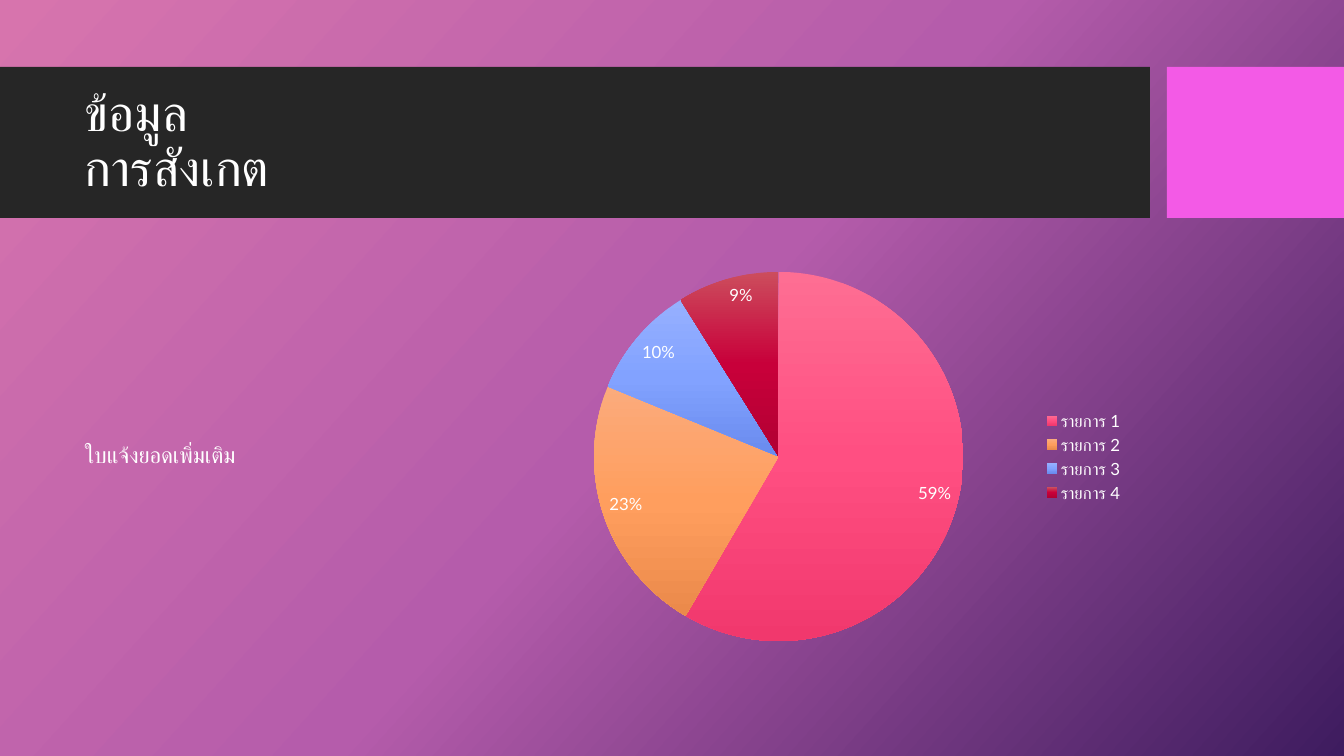
import copy
import pptx
import pptx.chart.data
import pptx.dml.color
import pptx.enum.chart
import pptx.enum.shapes
import pptx.enum.text
import pptx.util

SCALE = 12192000 / 1344
FONT = "Lato"
WHITE = "FFFFFF"


def rgb(value):
    return pptx.dml.color.RGBColor.from_string(value)


def gradient(fill, parent, colors, angle):
    fill.gradient()
    fill.gradient_angle = 360 - angle
    stops = parent.xpath(".//a:gsLst")[-1]
    stops.insert(1, copy.deepcopy(stops[0]))
    for stop, color, position in zip(fill.gradient_stops, colors, (0, 0.5, 1)):
        stop.color.rgb = rgb(color)
        stop.position = position


prs = pptx.Presentation()
prs.slide_width = round(1344 * SCALE)
prs.slide_height = round(756 * SCALE)
s = prs.slides.add_slide(prs.slide_layouts[6])
gradient(s.background.fill, s._element, ("D774AD", "B55CAB", "3E1C5F"), 42)

for left, width, color in ((0, 1150, "262626"), (1167, 177, "F35AE6")):
    box = [round(n * SCALE) for n in (left, 67, width, 151)]
    sp = s.shapes.add_shape(pptx.enum.shapes.MSO_SHAPE.RECTANGLE, *box)
    sp.shadow.inherit = False
    sp.fill.solid()
    sp.fill.fore_color.rgb = rgb(color)
    sp.line.fill.background()

texts = (
    ("ข้อมูล\vการสังเกต", (75, 83, 1059, 119), 36),
    ("ใบแจ้งยอดเพิ่มเติม", (75, 258, 417, 397), 16),
)
for text, box, size in texts:
    tf = s.shapes.add_textbox(*[round(n * SCALE) for n in box]).text_frame
    tf.word_wrap = True
    tf.vertical_anchor = pptx.enum.text.MSO_ANCHOR.MIDDLE
    p = tf.paragraphs[0]
    p.text = text
    p.line_spacing = 0.9
    for r in p.runs:
        for name, value in {"name": FONT, "size": pptx.util.Pt(size)}.items():
            setattr(r.font, name, value)
        r.font.color.rgb = rgb(WHITE)

data = pptx.chart.data.CategoryChartData()
data.categories = [f"รายการ {n}" for n in range(1, 5)]
data.add_series("Series 1", (59, 23, 10, 9))
box = [round(n * SCALE) for n in (516, 258, 618, 397)]
chart = s.shapes.add_chart(pptx.enum.chart.XL_CHART_TYPE.PIE, *box, data).chart
chart.has_title = False
chart.has_legend = True
chart.legend.position = pptx.enum.chart.XL_LEGEND_POSITION.RIGHT
chart.legend.include_in_layout = False

plot = chart.plots[0]
plot.vary_by_categories = True
plot.has_data_labels = True
labels = plot.data_labels
label_format = {
    "show_value": True,
    "show_percentage": False,
    "number_format": '0"%"',
    "number_format_is_linked": False,
    "position": pptx.enum.chart.XL_LABEL_POSITION.INSIDE_END,
}
for name, value in label_format.items():
    setattr(labels, name, value)

for font, size in ((chart.font, 10), (chart.legend.font, 12), (labels.font, 12)):
    for name, value in {"name": FONT, "size": pptx.util.Pt(size)}.items():
        setattr(font, name, value)
    font.color.rgb = rgb(WHITE)

slices = (
    ("FE6E93", "FF4F82", "F1386D"),
    ("FBAB7C", "FF9E5E", "EB8A4B"),
    ("96B0FF", "82A2FF", "698BEE"),
    ("CC4D5D", "C8003A", "B20033"),
)
series = plot.series[0]
for i, colors in enumerate(slices):
    point = series.points[i]
    gradient(point.format.fill, series._element, colors, 90)
    point.format.line.fill.background()

prs.save("out.pptx")
